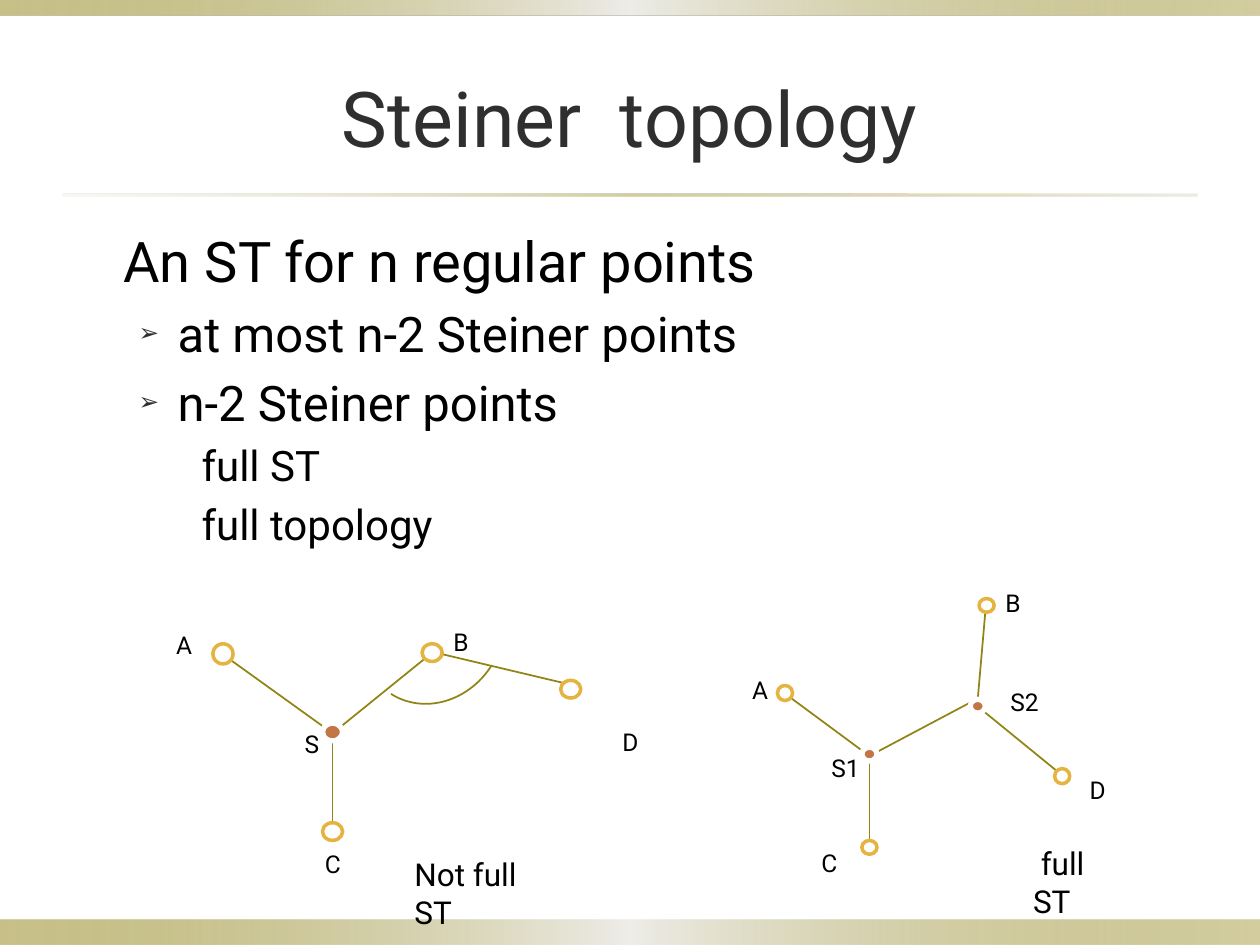
from dataclasses import dataclass

from lxml import etree
from pptx import Presentation
from pptx.dml.color import RGBColor
from pptx.enum.shapes import MSO_CONNECTOR, MSO_SHAPE
from pptx.enum.text import MSO_ANCHOR, MSO_AUTO_SIZE, PP_ALIGN
from pptx.oxml.ns import qn
from pptx.util import Pt

STRAIGHT = MSO_CONNECTOR.STRAIGHT
RECTANGLE, DOT, ARC = MSO_SHAPE.RECTANGLE, MSO_SHAPE.FLOWCHART_CONNECTOR, MSO_SHAPE.ARC
MIDDLE, TOP = MSO_ANCHOR.MIDDLE, MSO_ANCHOR.TOP
CENTER, LEFT = PP_ALIGN.CENTER, PP_ALIGN.LEFT
NO_FIT = MSO_AUTO_SIZE.NONE
PX = 9144


@dataclass(frozen=True)
class Theme:
    """Colours, font and type sizes of the slide."""
    font: str = "Roboto"
    heading: str = "2F2F2F"
    ink: str = "000000"
    olive: str = "918415"
    pale: str = "EEEDE8"
    mist: str = "DCD9CC"
    gold: str = "E5B440"
    copper: str = "C47546"
    white: str = "FFFFFF"
    title: int = 44
    levels: tuple = (32, 28, 24)
    caption: int = 18
    label: int = 14


THEME = Theme()
BAND = ((0, THEME.olive, 50), (50, THEME.pale, 100), (100, THEME.olive, 40))
RULE = ((0, THEME.mist, 20), (50, THEME.olive, 40), (100, THEME.mist, 50))
INDENTS = ((38, 0), (81, -31), (100, 0))
BODY = (
    (0, "An ST for n regular points"),
    (1, "at most n-2 Steiner points"),
    (1, "n-2 Steiner points"),
    (2, "full ST"),
    (2, "full topology"),
)
NOT_FULL = {
    "edges": ((175, 518, 264, 582), (343, 518, 264, 582),
              (264, 582, 264, 653), (350, 519, 447, 542)),
    "points": ((169, 511, 16, 16), (335, 511, 16, 14),
               (256, 653, 16, 14), (445, 540, 16, 14)),
    "steiner": ((256, 574, 16, 14),),
    "labels": (("A", 130, 495, 39), ("B", 350, 493, 39), ("C", 248, 669, 39),
               ("D", 484, 572, 39), ("S", 232, 574, 39)),
    "arcs": ((282, 444, 123, 110, 122.7),),
}
FULL = {
    "edges": ((621, 549, 690, 600), (773, 556, 690, 600), (690, 600, 690, 667),
              (845, 617, 780, 564), (776, 555, 782, 486)),
    "points": ((617, 544, 12, 12), (684, 667, 12, 11),
               (837, 610, 12, 12), (777, 475, 12, 11)),
    "steiner": ((684, 593, 12, 11), (770, 555, 12, 11)),
    "labels": (("A", 587, 531, 31), ("B", 788, 462, 31), ("C", 642, 668, 31),
               ("D", 855, 610, 31), ("S1", 650, 593, 47), ("S2", 792, 540, 47)),
    "arcs": (),
}


def apply(target, values):
    """Set attributes of the target from a dict."""
    for name, value in values.items():
        setattr(target, name, value)


def add_xml(parent, tag, **attributes):
    """Append a child element with the given attributes."""
    return etree.SubElement(parent, qn(tag), attributes)


class SlideBuilder:
    """Draw styled elements on the current slide."""

    def __init__(self, page, theme):
        """Keep the page, its drawing target and the theme."""
        self.page, self.theme, self.canvas = page, theme, page.shapes

    def place(self, box, left, top, width, height):
        """Position a box given in px."""
        apply(box, {"left": left * PX, "top": top * PX,
                    "width": width * PX, "height": height * PX})

    def add_span(self, para, text, size, color):
        """Add one styled span to a paragraph."""
        span = para.add_run()
        span.text = text
        apply(span.font, {"name": self.theme.font, "size": Pt(size)})
        span.font.color.rgb = RGBColor.from_string(color)

    def title(self, text, *bounds):
        """Fill the title placeholder."""
        box = self.page.shapes.title
        self.place(box, *bounds)
        apply(box.text_frame, {"vertical_anchor": MIDDLE, "auto_size": NO_FIT})
        para = box.text_frame.paragraphs[0]
        para.alignment = CENTER
        self.add_span(para, text, self.theme.title, self.theme.heading)

    def body(self, items, *bounds):
        """Fill the body placeholder with an outline."""
        box = self.page.placeholders[1]
        self.place(box, *bounds)
        frame = box.text_frame
        apply(frame, {"vertical_anchor": TOP, "auto_size": NO_FIT})
        for index, (level, text) in enumerate(items):
            para = frame.add_paragraph() if index else frame.paragraphs[0]
            apply(para, {"level": level, "alignment": LEFT})
            self.bullet(para, level)
            self.add_span(para, text, self.theme.levels[level], self.theme.ink)

    def bullet(self, para, level):
        """Set the indent and the bullet of an outline level."""
        properties = para._p.get_or_add_pPr()
        margin, indent = INDENTS[level]
        properties.set("marL", str(margin * PX))
        properties.set("indent", str(indent * PX))
        if level != 1:
            add_xml(properties, "a:buNone")
            return
        add_xml(add_xml(properties, "a:buClr"), "a:srgbClr", val=self.theme.heading)
        add_xml(properties, "a:buSzPct", val="50000")
        add_xml(properties, "a:buChar", char="➢")

    def shape(self, kind, bounds, fill=None, line=None, weight=1):
        """Add a preset shape with optional fill and line."""
        left, top, width, height = (length * PX for length in bounds)
        box = self.canvas.add_shape(kind, left, top, width, height)
        box.shadow.inherit = False
        for part, color in ((box.fill, fill), (box.line.fill, line)):
            if color:
                part.solid()
                part.fore_color.rgb = RGBColor.from_string(color)
            else:
                part.background()
        if line:
            box.line.width = Pt(weight)
        return box

    def band(self, stops, *bounds):
        """Add a bar with a translucent horizontal gradient."""
        box = self.shape(RECTANGLE, bounds)
        box.fill.gradient()
        box.fill.gradient_angle = 0
        stop_list = box._element.spPr.find(qn("a:gradFill")).find(qn("a:gsLst"))
        stop_list.clear()
        for position, color, opacity in stops:
            stop = add_xml(stop_list, "a:gs", pos=str(position * 1000))
            tint = add_xml(stop, "a:srgbClr", val=color)
            add_xml(tint, "a:alpha", val=str(opacity * 1000))

    def edge(self, *ends):
        """Join two points with a straight line."""
        line = self.canvas.add_connector(STRAIGHT, *(length * PX for length in ends))
        line.line.color.rgb = RGBColor.from_string(self.theme.olive)
        line.line.width = Pt(1)
        add_xml(line._element.spPr, "a:effectLst")

    def text(self, text, size, *bounds):
        """Add a wrapped text box."""
        box = self.canvas.add_textbox(*(length * PX for length in bounds))
        box.text_frame.word_wrap = True
        self.add_span(box.text_frame.paragraphs[0], text, size, self.theme.ink)

    def tree(self, parts):
        """Draw a Steiner tree as one group."""
        theme = self.theme
        self.canvas = self.page.shapes.add_group_shape().shapes
        for ends in parts["edges"]:
            self.edge(*ends)
        for bounds in parts["points"]:
            self.shape(DOT, bounds, theme.white, theme.gold, 2)
        for bounds in parts["steiner"]:
            self.shape(DOT, bounds, theme.copper, theme.white, 3)
        for name, left, top, width in parts["labels"]:
            self.text(name, theme.label, left, top, width, 34)
        for *bounds, rotation in parts["arcs"]:
            self.shape(ARC, bounds, line=theme.olive).rotation = rotation
        self.canvas = self.page.shapes


def main():
    """Build and save the slide."""
    deck = Presentation()
    apply(deck, {"slide_width": 1000 * PX, "slide_height": 750 * PX})
    builder = SlideBuilder(deck.slides.add_slide(deck.slide_layouts[1]), THEME)
    builder.band(BAND, 0, 730, 1000, 20)
    builder.band(BAND, 0, 0, 1000, 12)
    builder.band(RULE, 50, 154, 900, 2)
    builder.title("Steiner  topology", 50, 30, 900, 125)
    builder.body(BODY, 50, 175, 900, 513)
    builder.tree(NOT_FULL)
    builder.tree(FULL)
    builder.text("Not full ST", THEME.caption, 319, 674, 129, 40)
    builder.text(" full ST", THEME.caption, 810, 665, 92, 40)
    deck.save("out.pptx")


if __name__ == "__main__":
    main()
